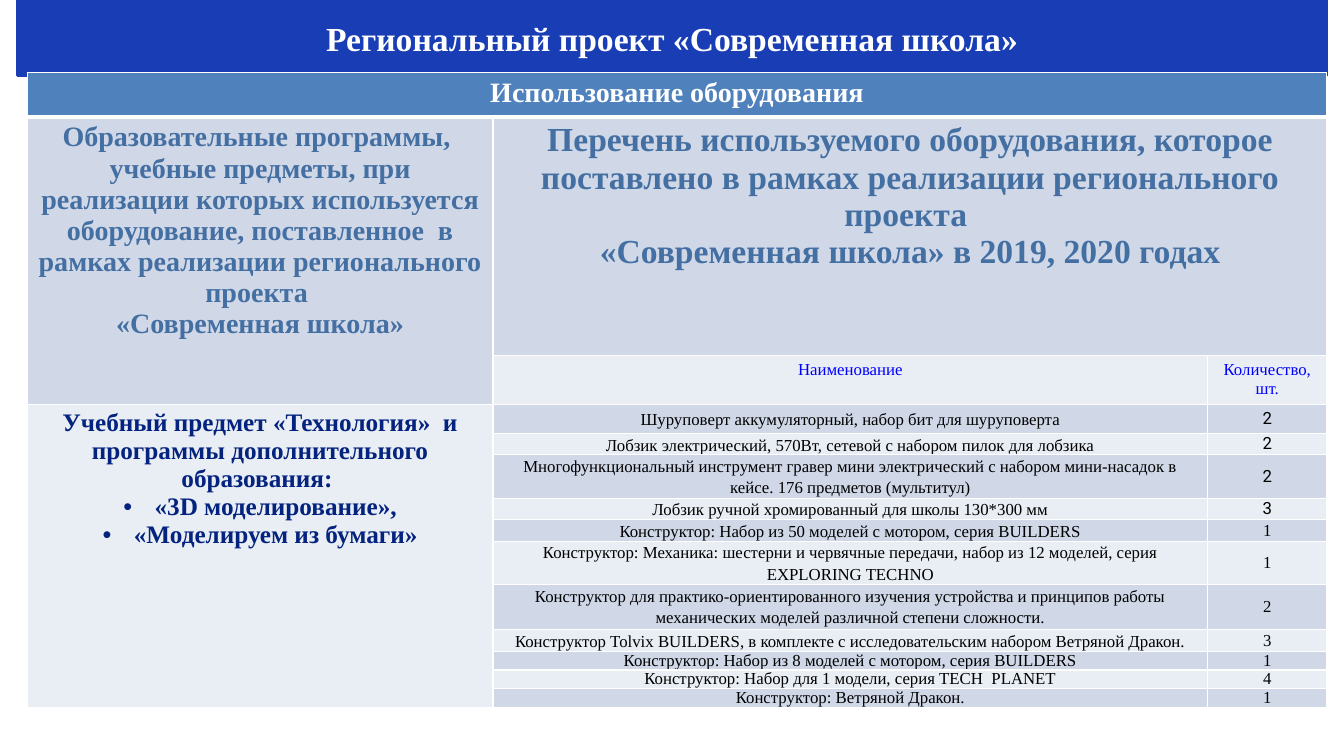
"""Build the slide on the equipment used in the regional school project."""
import lxml.etree
import pptx
import pptx.dml.color
import pptx.enum.text
import pptx.oxml.ns
import pptx.util

Inches, Pt = pptx.util.Inches, pptx.util.Pt
qn = pptx.oxml.ns.qn
CENTER = pptx.enum.text.PP_ALIGN.CENTER
MIDDLE = pptx.enum.text.MSO_ANCHOR.MIDDLE
TOP = pptx.enum.text.MSO_ANCHOR.TOP

TITLE = "Региональный проект «Современная школа»"
HEADING = "Использование оборудования"
PROGRAMS = [
    "Образовательные программы, ",
    "учебные предметы, при реализации которых используется оборудование, "
    "поставленное  в рамках реализации регионального проекта ",
    "«Современная школа»",
]
EQUIPMENT = [
    "Перечень используемого оборудования, которое поставлено в рамках "
    "реализации регионального проекта ",
    "«Современная школа» в 2019, 2020 годах",
]
COLUMN_HEADS = ["Наименование", "Количество, шт."]
SUBJECT = ["Учебный предмет «Технология»  и", "программы дополнительного образования: "]
COURSES = ["«3D моделирование»,", "«Моделируем из бумаги»"]
ITEMS = [
    ("Шуруповерт аккумуляторный, набор бит для шуруповерта", 2, 0.29),
    ("Лобзик электрический, 570Вт, сетевой с набором пилок для лобзика", 2, 0.21),
    ("Многофункциональный инструмент гравер мини электрический с набором "
     "мини-насадок в кейсе. 176 предметов (мультитул)", 2, 0.43),
    ("Лобзик ручной хромированный для школы 130*300 мм", 3, 0.21),
    ("Конструктор: Набор из 50 моделей с мотором, серия BUILDERS", 1, 0.21),
    ("Конструктор: Механика: шестерни и червячные передачи, набор из 12 моделей, "
     "серия EXPLORING TECHNO", 1, 0.43),
    ("Конструктор для практико-ориентированного изучения устройства и принципов "
     "работы механических моделей различной степени сложности.", 2, 0.45),
    ("Конструктор Tolvix BUILDERS, в комплекте с исследовательским набором "
     "Ветряной Дракон.", 3, 0.21),
    ("Конструктор: Набор из 8 моделей с мотором, серия BUILDERS", 1, 0.18),
    ("Конструктор: Набор для 1 модели, серия TECH  PLANET", 4, 0.18),
    ("Конструктор: Ветряной Дракон.", 1, 0.18),
]
COLUMN_WIDTHS = [4.62, 7.09, 1.18]
HEAD_HEIGHTS = [0.44, 2.37, 0.48]
TOOLS, SPACED = 4, 8
BLUE, HEAD_FILL, DARK, LIGHT = "183DB4", "4F81BD", "D0D8E8", "E9EDF4"
WHITE, STEEL, NAVY, LINK, BLACK = "FFFFFF", "446FA2", "03237F", "0000FF", "000000"
SERIF, SANS = "Times New Roman", "Roboto"


def rgb(value):
    return pptx.dml.color.RGBColor.from_string(value)


def write(tf, lines, size, color, bold=True, font=SERIF, spacing=None):
    for i, line in enumerate(lines):
        p = tf.paragraphs[0] if i == 0 else tf.add_paragraph()
        p.alignment = CENTER
        if spacing:
            p.line_spacing = spacing
        r = p.add_run()
        r.text = line
        for name, value in {"size": Pt(size), "bold": bold, "name": font}.items():
            setattr(r.font, name, value)
        r.font.color.rgb = rgb(color)


def add_bullet(p):
    pPr = p._p.get_or_add_pPr()
    pPr.set("marL", str(Inches(0.31)))
    pPr.set("indent", str(-Inches(0.31)))
    lxml.etree.SubElement(pPr, qn("a:buFont"), typeface="Arial")
    lxml.etree.SubElement(pPr, qn("a:buChar"), char="•")


def style_cell(cell, color, bottom=1):
    cell.fill.solid()
    cell.fill.fore_color.rgb = rgb(color)
    tcPr = cell._tc.get_or_add_tcPr()
    for i, (side, width) in enumerate({"L": 1, "R": 1, "T": 1, "B": bottom}.items()):
        ln = lxml.etree.Element(qn("a:ln" + side), w=str(Pt(width)))
        fill = lxml.etree.SubElement(ln, qn("a:solidFill"))
        lxml.etree.SubElement(fill, qn("a:srgbClr"), val=WHITE)
        tcPr.insert(i, ln)


def tighten(cell, anchor):
    margins = {"margin_left": 0.07, "margin_right": 0.07, "margin_top": 0, "margin_bottom": 0}
    for name, value in margins.items():
        setattr(cell, name, Inches(value))
    cell.vertical_anchor = anchor


def add_title(s):
    sp = s.shapes.title
    box = {"left": 0.17, "top": 0, "width": 12.99, "height": 0.75}
    for name, value in box.items():
        setattr(sp, name, Inches(value))
    geom = lxml.etree.SubElement(sp._element.spPr, qn("a:prstGeom"), prst="horizontalScroll")
    lxml.etree.SubElement(geom, qn("a:avLst"))
    sp.fill.solid()
    sp.fill.fore_color.rgb = rgb(BLUE)
    sp.line.color.rgb = rgb(BLUE)
    sp.line.width = Pt(2)
    sp.text_frame.vertical_anchor = MIDDLE
    write(sp.text_frame, [TITLE], 24, WHITE)


def add_equipment_table(s):
    heights = HEAD_HEIGHTS + [height for _, _, height in ITEMS]
    first, last = len(HEAD_HEIGHTS), len(heights) - 1
    frame = s.shapes.add_table(len(heights), len(COLUMN_WIDTHS), Inches(0.27), Inches(0.72),
                               Inches(sum(COLUMN_WIDTHS)), Inches(sum(heights)))
    table = frame.table
    for column, width in zip(table.columns, COLUMN_WIDTHS):
        column.width = Inches(width)
    for i, (row, height) in enumerate(zip(table.rows, heights)):
        row.height = Inches(height)
        band = HEAD_FILL if i == 0 else DARK if i % 2 else LIGHT
        for j, cell in enumerate(row.cells):
            left = DARK if i < first else LIGHT
            style_cell(cell, left if j == 0 and i else band, 1 if i else 3)

    for start, end in [((0, 0), (0, 2)), ((1, 0), (2, 0)), ((1, 1), (1, 2)),
                       ((first, 0), (last, 0))]:
        table.cell(*start).merge(table.cell(*end))
    write(table.cell(0, 0).text_frame, [HEADING], 20, WHITE)
    write(table.cell(1, 0).text_frame, PROGRAMS, 20, STEEL)
    write(table.cell(1, 1).text_frame, EQUIPMENT, 24, STEEL)
    for j, head in enumerate(COLUMN_HEADS, 1):
        write(table.cell(2, j).text_frame, [head], 12, LINK, False)
    subject = table.cell(first, 0).text_frame
    write(subject, SUBJECT + COURSES, 18, NAVY)
    for p in subject.paragraphs[len(SUBJECT):]:
        add_bullet(p)

    for i, (name, count, _) in enumerate(ITEMS):
        item, amount = table.cell(first + i, 1), table.cell(first + i, 2)
        tighten(item, MIDDLE if i < 2 else TOP)
        tighten(amount, MIDDLE)
        write(item.text_frame, [name], 12, BLACK, False, spacing=1.15 if i < SPACED else None)
        write(amount.text_frame, [str(count)], 12, BLACK, False, SANS if i < TOOLS else SERIF)


def main():
    prs = pptx.Presentation()
    prs.slide_width, prs.slide_height = Inches(13.33), Inches(7.5)
    s = prs.slides.add_slide(prs.slide_layouts[5])
    add_title(s)
    add_equipment_table(s)
    prs.save("out.pptx")


if __name__ == "__main__":
    main()
